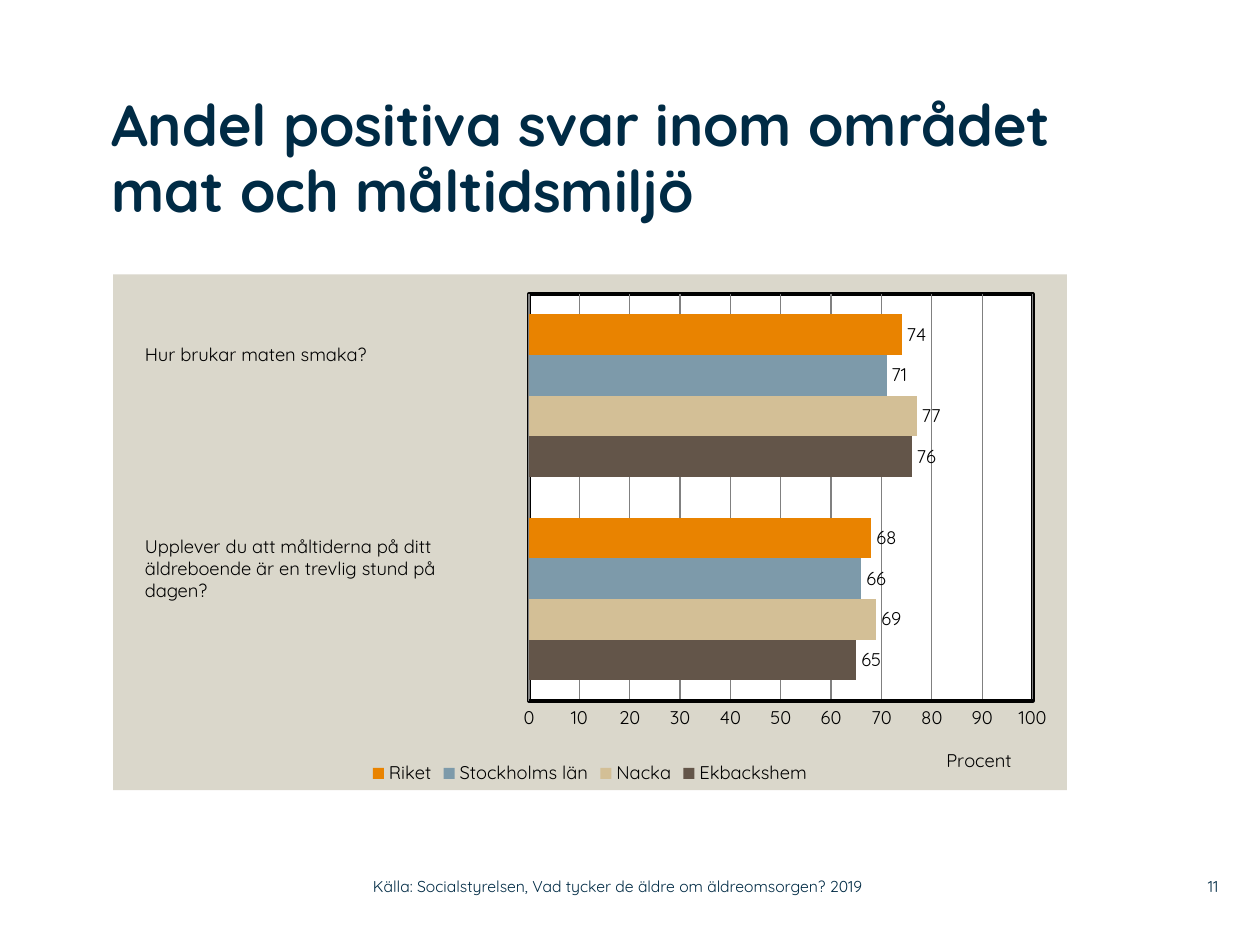
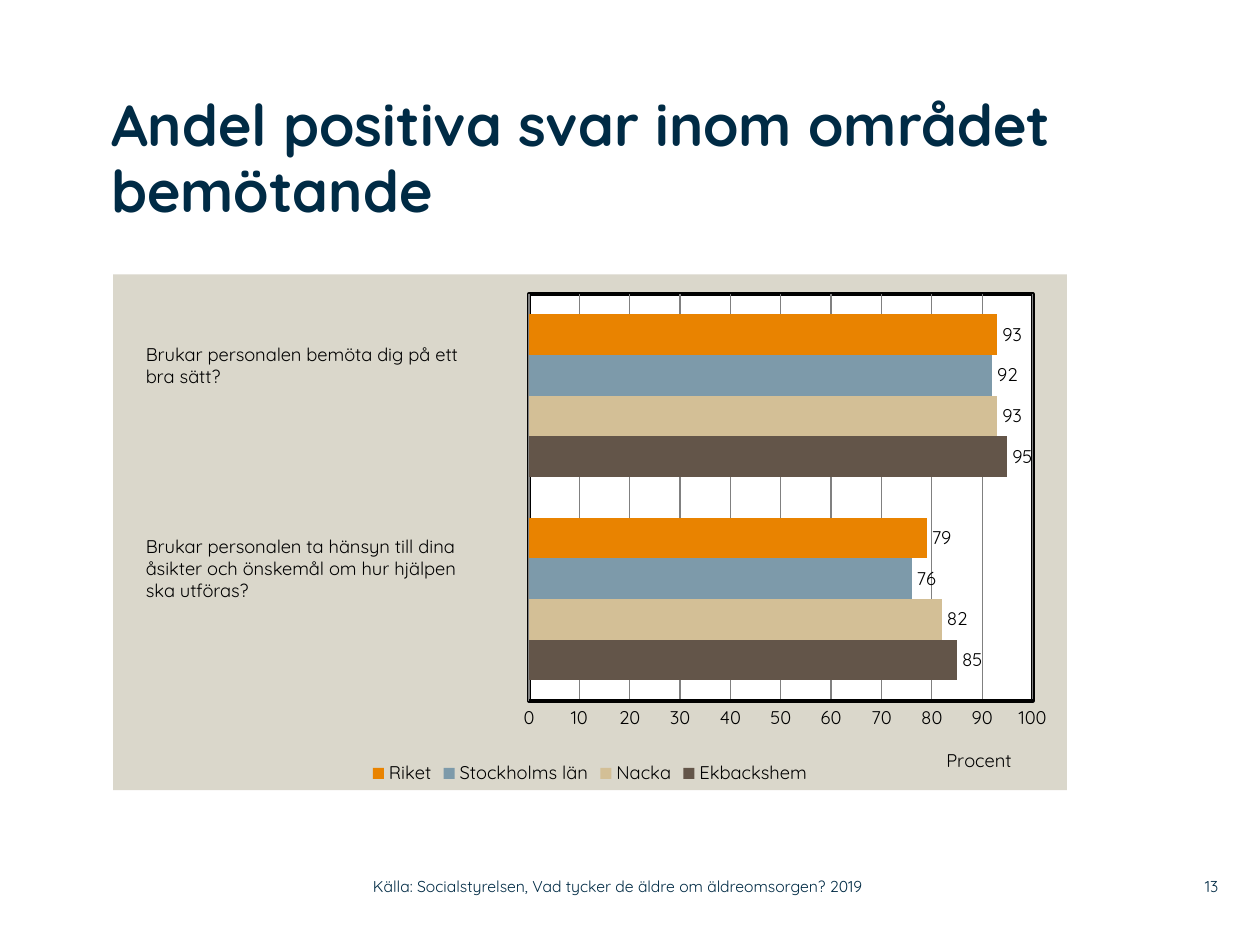
from pptx import Presentation, oxml
from pptx import util as u
from pptx.chart import data as chart_data
from pptx.dml import color
from pptx.enum import chart as charts, text
from pptx.oxml import ns

FONT = "Quicksand"
NAVY, BLACK, WHITE, SAND, GRID = "002B45", "000000", "FFFFFF", "DAD7CB", "808080"
SOURCE = "Källa: Socialstyrelsen, Vad tycker de äldre om äldreomsorgen? 2019"
SERIES = [
    ("Ekbackshem", "635549"),
    ("Nacka", "D3BF96"),
    ("Stockholms län", "7D9AAA"),
    ("Riket", "E98300"),
]
PLOT_LAYOUT = dict(layoutTarget="inner", xMode="edge", yMode="edge", x=0.436, y=0.038, w=0.528, h=0.789)
TITLE_LAYOUT = dict(xMode="edge", yMode="edge", x=0.87, y=0.91)
SLIDES = [
    dict(
        title="Andel positiva svar inom området mat och måltidsmiljö",
        title_width=21.39,
        questions=[
            "Hur brukar maten smaka?",
            "Upplever du att måltiderna på ditt äldreboende är en trevlig stund på\ndagen?",
        ],
        question_left=2.67,
        question_widths=[7.54, 7.44],
        values=[(65, 76), (69, 77), (66, 71), (68, 74)],
        number="11",
    ),
    dict(
        title="Andel positiva svar inom området bemötande",
        title_width=19.3,
        questions=[
            "Brukar personalen bemöta dig på ett\nbra sätt?",
            "Brukar personalen ta hänsyn till dina\nåsikter och önskemål om hur hjälpen\nska utföras?",
        ],
        question_left=2.69,
        question_widths=[7.54, 7.59],
        values=[(85, 95), (82, 93), (76, 92), (79, 93)],
        number="13",
    ),
]

rgb = color.RGBColor.from_string


def add_text(page, content, left, top, width, height, size=10.5, ink=BLACK, bold=False,
             align=text.PP_ALIGN.LEFT, anchor=text.MSO_ANCHOR.TOP, inset=(0, 0), spacing=1.0):
    box = page.shapes.add_textbox(u.Cm(left), u.Cm(top), u.Cm(width), u.Cm(height))
    frame = box.text_frame
    frame.word_wrap = True
    frame.vertical_anchor = anchor
    frame.margin_left = frame.margin_right = u.Cm(inset[0])
    frame.margin_top = frame.margin_bottom = u.Cm(inset[1])
    frame.text = content
    for para in frame.paragraphs:
        para.alignment = align
        para.line_spacing = spacing
        for span in para.runs:
            span.font.name = FONT
            span.font.size = u.Pt(size)
            span.font.bold = bold
            span.font.color.rgb = rgb(ink)


def set_layout(parent, index, settings):
    for old in parent.findall(ns.qn("c:layout")):
        parent.remove(old)
    entries = "".join(f'<c:{key} val="{value}"/>' for key, value in settings.items())
    parent.insert(index, oxml.parse_xml(
        f'<c:layout {ns.nsdecls("c")}><c:manualLayout>{entries}</c:manualLayout></c:layout>'))


deck = Presentation()
deck.slide_width = u.Cm(25.4)
deck.slide_height = u.Cm(19.05)

for content in SLIDES:
    page = deck.slides.add_slide(deck.slide_layouts[6])

    answers = chart_data.CategoryChartData()
    answers.categories = ["1", "2"]
    for (name, fill), values in zip(SERIES, content["values"]):
        answers.add_series(name, values)
    chart = page.shapes.add_chart(
        charts.XL_CHART_TYPE.BAR_CLUSTERED,
        u.Cm(2.28), u.Cm(5.53), u.Cm(19.23), u.Cm(10.4), answers).chart
    chart.has_title = False
    chart.font.name = FONT
    chart.font.size = u.Pt(10.5)
    chart.font.color.rgb = rgb(BLACK)
    chart.has_legend = True
    chart.legend.position = charts.XL_LEGEND_POSITION.BOTTOM
    chart.legend.include_in_layout = False

    plot = chart.plots[0]
    plot.gap_width = 100
    plot.overlap = 0
    plot.vary_by_categories = False
    for series, (name, fill) in zip(plot.series, SERIES):
        series.format.fill.solid()
        series.format.fill.fore_color.rgb = rgb(fill)
        series.data_labels.show_value = True
        series.data_labels.position = charts.XL_LABEL_POSITION.OUTSIDE_END

    chart.category_axis.visible = False
    axis = chart.value_axis
    axis.minimum_scale = 0
    axis.maximum_scale = 100
    axis.major_unit = 10
    axis.major_tick_mark = charts.XL_TICK_MARK.NONE
    axis.format.line.color.rgb = rgb(BLACK)
    axis.format.line.width = u.Pt(2)
    axis.has_major_gridlines = True
    axis.major_gridlines.format.line.color.rgb = rgb(GRID)
    axis.major_gridlines.format.line.width = u.Pt(0.75)
    axis.axis_title.text_frame.text = "Procent"
    label_font = axis.axis_title.text_frame.paragraphs[0].runs[0].font
    label_font.name = FONT
    label_font.size = u.Pt(10.5)
    label_font.bold = False
    label_font.color.rgb = rgb(BLACK)

    chart_root = chart.element.find(ns.qn("c:chart"))
    plot_area = chart_root.find(ns.qn("c:plotArea"))
    set_layout(plot_area, 0, PLOT_LAYOUT)
    set_layout(plot_area.find(ns.qn("c:valAx")).find(ns.qn("c:title")), 1, TITLE_LAYOUT)
    frame_line = f'<a:ln w="{u.Pt(2.25)}"><a:solidFill><a:srgbClr val="{BLACK}"/></a:solidFill></a:ln>'
    for last_part, fill, line in [
        (chart_root, SAND, "<a:ln><a:noFill/></a:ln>"),
        (plot_area[-1], WHITE, frame_line),
    ]:
        last_part.addnext(oxml.parse_xml(
            f'<c:spPr {ns.nsdecls("c", "a")}><a:solidFill><a:srgbClr val="{fill}"/></a:solidFill>{line}</c:spPr>'))

    add_text(page, content["title"], 2.24, 1.9, content["title_width"], 3.6,
             size=33, ink=NAVY, bold=True, spacing=0.95)
    for question, top, width in zip(content["questions"], (6.78, 10.65), content["question_widths"]):
        height = 0.71 if question.count("\n") == 0 else 1.15 if top < 10 else 1.6
        add_text(page, question, content["question_left"], top, width, height, inset=(0.25, 0.13))
    for footer, left, width, align in [
        (content["number"], 23.37, 1.19, text.PP_ALIGN.RIGHT),
        (SOURCE, 7.52, 11.25, text.PP_ALIGN.LEFT),
    ]:
        add_text(page, footer, left, 17.5, width, 0.74, size=9, ink=NAVY,
                 align=align, anchor=text.MSO_ANCHOR.MIDDLE)

deck.save("out.pptx")
